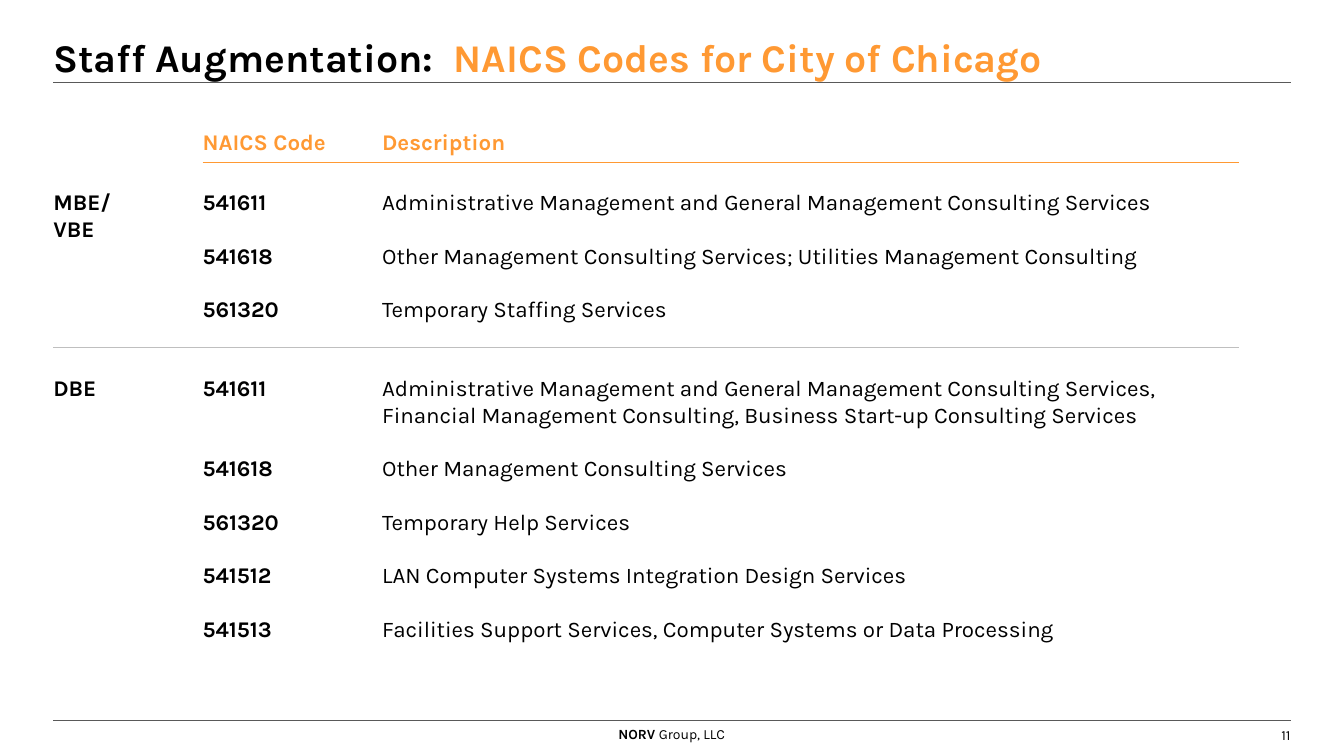
from lxml import etree
from pptx import Presentation
from pptx.dml.color import RGBColor
from pptx.enum.shapes import MSO_CONNECTOR
from pptx.enum.text import MSO_ANCHOR, PP_ALIGN
from pptx.oxml.ns import qn
from pptx.util import Inches, Pt

STRAIGHT = MSO_CONNECTOR.STRAIGHT
TOP, MIDDLE, BOTTOM = MSO_ANCHOR.TOP, MSO_ANCHOR.MIDDLE, MSO_ANCHOR.BOTTOM
LEFT, RIGHT = PP_ALIGN.LEFT, PP_ALIGN.RIGHT
COLORS = {"black": "000000", "orange": "FF9933", "dark": "595959", "light": "BFBFBF"}

MARGIN, CODE_X, DESC_X = 0.53, 2.01, 3.79
TABLE_RIGHT, PAGE_RIGHT = 12.29, 12.8
GROUP_W, CODE_W, DESC_W = 0.94, 1.25, 8.49
LINE_H, ROW_STEP = 0.27, 0.53

prs = Presentation()
prs.slide_width, prs.slide_height = Inches(13.33), Inches(7.5)
s = prs.slides.add_slide(prs.slide_layouts[6])


def add_text(x, y, w, h, runs, size=16, align=LEFT, anchor=TOP, wrap=True):
    sp = s.shapes.add_textbox(Inches(x), Inches(y), Inches(w), Inches(h))
    tf = sp.text_frame
    tf.margin_left = tf.margin_right = tf.margin_top = tf.margin_bottom = 0
    tf.word_wrap, tf.vertical_anchor = wrap, anchor
    p = tf.paragraphs[0]
    p.alignment = align
    for text, color, bold in runs:
        r = p.add_run()
        r.text = text
        r.font.name, r.font.size, r.font.bold = "Karla", Pt(size), bold
        r.font.color.rgb = RGBColor.from_string(COLORS[color])
    return p


def add_rule(x1, x2, y, color, width):
    ln = s.shapes.add_connector(STRAIGHT, Inches(x1), Inches(y), Inches(x2), Inches(y))
    ln.line.color.rgb = RGBColor.from_string(COLORS[color])
    ln.line.width = Pt(width)
    etree.SubElement(ln._element.spPr, qn("a:effectLst"))


for y in (0.82, 7.15):
    add_rule(MARGIN, PAGE_RIGHT, y, "dark", 1)

p = add_text(MARGIN, 0.37, PAGE_RIGHT - MARGIN, 0.43,
             [("Staff Augmentation:\t", "black", True),
              ("NAICS Codes for City of Chicago", "orange", True)],
             size=28, anchor=BOTTOM)
p.line_spacing = 0.9
tabs = etree.SubElement(p._p.get_or_add_pPr(), qn("a:tabLst"))
etree.SubElement(tabs, qn("a:tab"), pos=str(Inches(3.97)), algn="l")

add_text(5.89, 7.2, 1.3, 0.17,
         [("NORV ", "black", True), ("Group, LLC", "black", False)],
         size=10, align=RIGHT, anchor=MIDDLE)
add_text(12.64, 7.2, 0.16, 0.18, [("11", "black", False)],
         size=10, align=RIGHT, anchor=MIDDLE, wrap=False)

for x, w, heading in ((CODE_X, CODE_W, "NAICS Code"), (DESC_X, DESC_W, "Description")):
    add_text(x, 1.27, w, LINE_H, [(heading, "orange", True)])
add_rule(CODE_X, TABLE_RIGHT, 1.61, "orange", 0.75)
add_rule(MARGIN, TABLE_RIGHT, 3.45, "light", 0.5)

groups = [
    ("MBE/VBE", 1.87, 2, [
        ("541611", "Administrative Management and General Management Consulting Services", 1),
        ("541618", "Other Management Consulting Services; Utilities Management Consulting", 1),
        ("561320", "Temporary Staffing Services", 1),
    ]),
    ("DBE", 3.71, 1, [
        ("541611", "Administrative Management and General Management Consulting Services, "
                   "Financial Management Consulting, Business Start-up Consulting Services", 2),
        ("541618", "Other Management Consulting Services", 1),
        ("561320", "Temporary Help Services", 1),
        ("541512", "LAN Computer Systems Integration Design Services", 1),
        ("541513", "Facilities Support Services, Computer Systems or Data Processing", 1),
    ]),
]
for name, y, name_lines, rows in groups:
    add_text(MARGIN, y, GROUP_W, name_lines * LINE_H, [(name, "black", True)])
    for code, description, lines in rows:
        add_text(CODE_X, y, CODE_W, LINE_H, [(code, "black", True)])
        add_text(DESC_X, y, DESC_W, lines * LINE_H, [(description, "black", False)])
        y += ROW_STEP + (lines - 1) * LINE_H

prs.save("out.pptx")
